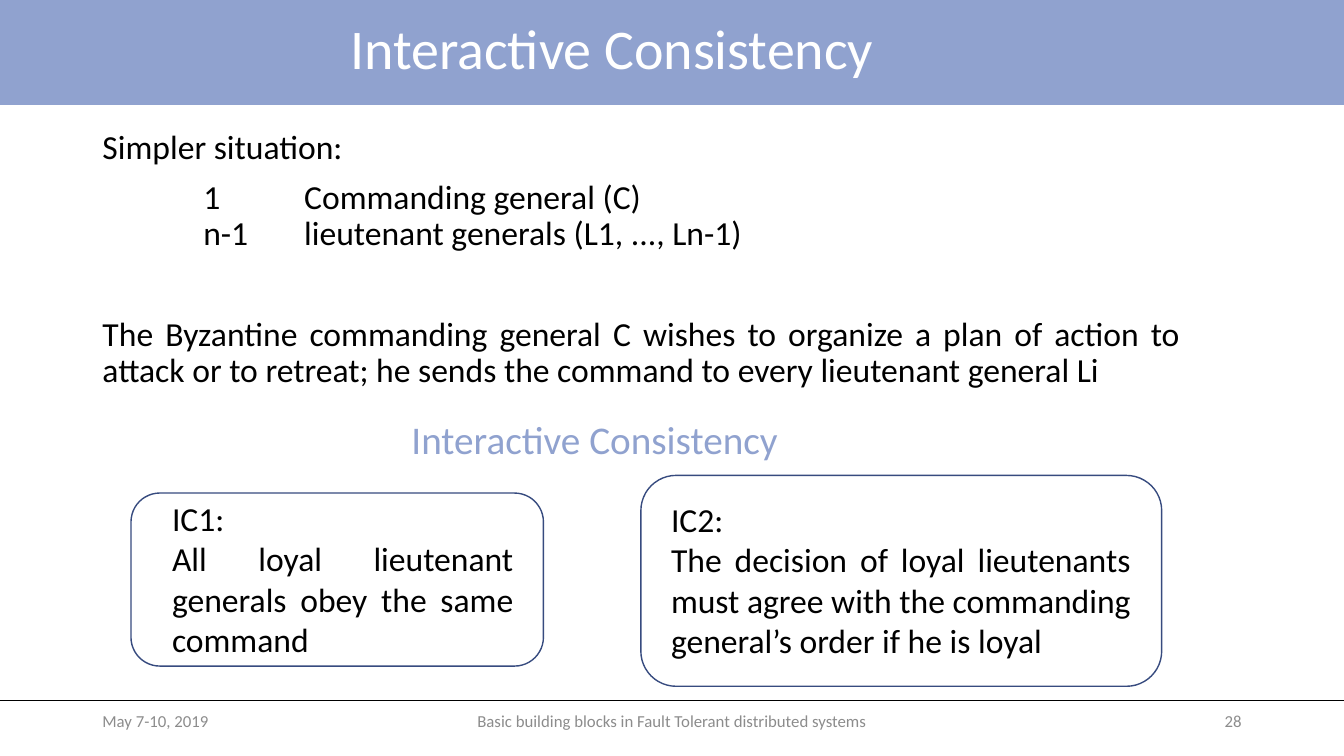
from dataclasses import dataclass

from lxml import etree
from pptx import Presentation
from pptx.dml.color import RGBColor
from pptx.enum.shapes import MSO_CONNECTOR, MSO_SHAPE
from pptx.enum.text import MSO_ANCHOR, MSO_AUTO_SIZE, PP_ALIGN
from pptx.oxml.ns import qn
from pptx.util import Inches, Pt

LEFT, CENTER, RIGHT, JUSTIFY = PP_ALIGN.LEFT, PP_ALIGN.CENTER, PP_ALIGN.RIGHT, PP_ALIGN.JUSTIFY
TOP, MIDDLE = MSO_ANCHOR.TOP, MSO_ANCHOR.MIDDLE
RECTANGLE, ROUNDED = MSO_SHAPE.RECTANGLE, MSO_SHAPE.ROUNDED_RECTANGLE
STRAIGHT = MSO_CONNECTOR.STRAIGHT
NO_AUTOFIT = MSO_AUTO_SIZE.NONE

WIDTH, HEIGHT = Inches(13.33), Inches(7.5)
COLUMN, ROW = WIDTH / 16, HEIGHT / 9
FOOTER_ROW = 8.34


@dataclass(frozen=True)
class Theme:
    font: str = "Calibri"
    accent: str = "90A2CF"
    outline: str = "374B7F"
    text: str = "000000"
    light: str = "FFFFFF"
    muted: str = "8C8C8C"
    title_size: int = 40
    heading_size: int = 28
    body_size: int = 24
    footer_size: int = 12


THEME = Theme()


def color(value):
    return RGBColor.from_string(value)


def grid(left, top, width, height):
    return [round(length) for length in (left * COLUMN, top * ROW, width * COLUMN, height * ROW)]


def place(shape, area):
    shape.left, shape.top, shape.width, shape.height = grid(*area)


def write(frame, text, size=THEME.body_size, ink=THEME.text, align=LEFT, spacing=1.0,
          before=0, margin=0, indent=0, first=False):
    paragraph = frame.paragraphs[0] if first else frame.add_paragraph()
    properties = paragraph._p.get_or_add_pPr()
    properties.set("marL", str(Inches(margin)))
    properties.set("indent", str(Inches(indent)))
    etree.SubElement(properties, qn("a:buNone"))
    paragraph.text = text
    paragraph.alignment = align
    paragraph.line_spacing = spacing
    paragraph.space_before = Pt(before)
    paragraph.font.name = THEME.font
    paragraph.font.size = Pt(size)
    paragraph.font.color.rgb = color(ink)


def prepare(shape, anchor):
    frame = shape.text_frame
    frame.word_wrap = True
    frame.auto_size = NO_AUTOFIT
    frame.vertical_anchor = anchor
    return frame


def add_text(slide, area, lines, anchor=TOP, **style):
    frame = prepare(slide.shapes.add_textbox(*grid(*area)), anchor)
    for number, line in enumerate(lines):
        write(frame, line, first=number == 0, **style)


def add_box(slide, kind, area, fill=None, outline=None):
    shape = slide.shapes.add_shape(kind, *grid(*area))
    shape.shadow.inherit = False
    if fill:
        shape.fill.solid()
        shape.fill.fore_color.rgb = color(fill)
    else:
        shape.fill.background()
    if outline:
        shape.line.color.rgb = color(outline)
        shape.line.width = Pt(1)
    else:
        shape.line.fill.background()
    return shape


def add_rule(slide, row):
    y = round(row * ROW)
    rule = slide.shapes.add_connector(STRAIGHT, 0, y, WIDTH, y)
    rule.line.color.rgb = color(THEME.text)
    rule.line.width = Pt(0.5)
    etree.SubElement(rule.element.spPr, qn("a:effectLst"))
    return rule


def add_background(slide):
    band = add_box(slide, RECTANGLE, (0, 0, 16, 1.25), fill=THEME.accent)
    rule = add_rule(slide, FOOTER_ROW)
    for position, shape in enumerate((band, rule), start=2):
        slide.shapes.element.insert(position, shape.element)


def fill_title(slide):
    title = slide.shapes.title
    place(title, (0, 0, 14.57, 1.22))
    write(prepare(title, MIDDLE), "Interactive Consistency", size=THEME.title_size,
          ink=THEME.light, align=CENTER, spacing=0.9, first=True)


def fill_body(slide):
    body = slide.placeholders[1]
    place(body, (1.1, 1.49, 13.07, 3.31))
    frame = prepare(body, TOP)
    write(frame, "Simpler situation:", spacing=0.9, first=True)
    for text, before in (("1\tCommanding general (C)", 10),
                         ("n-1\tlieutenant generals (L1, ..., Ln-1)", 0)):
        write(frame, text, spacing=0.9, before=before, margin=2, indent=-1)
    write(frame, "The Byzantine commanding general C wishes to organize a plan of action to "
          "attack or to retreat; he sends the command to every lieutenant general Li",
          align=JUSTIFY, spacing=0.9, before=46)


def add_footer(slide):
    for left, width, text, align in (
            (1.1, 3.6, "May 7-10, 2019", LEFT),
            (5.3, 5.4, "Basic building blocks in Fault Tolerant distributed systems", CENTER),
            (11.3, 3.6, "28", RIGHT)):
        add_text(slide, (left, FOOTER_ROW, width, 0.48), [text], anchor=MIDDLE,
                 size=THEME.footer_size, ink=THEME.muted, align=align)


def add_condition(slide, frame_area, text_area, lines):
    add_text(slide, text_area, lines, align=JUSTIFY)
    add_box(slide, ROUNDED, frame_area, outline=THEME.outline)


def main():
    presentation = Presentation()
    presentation.slide_width, presentation.slide_height = WIDTH, HEIGHT
    slide = presentation.slides.add_slide(presentation.slide_layouts[1])
    fill_title(slide)
    add_background(slide)
    add_footer(slide)
    fill_body(slide)
    add_text(slide, (4.78, 4.88, 5.71, 0.68), ["Interactive Consistency"],
             size=THEME.heading_size, ink=THEME.accent)
    add_condition(slide, (1.56, 5.87, 4.91, 2.06), (1.93, 5.87, 4.3, 2.06),
                  ["IC1:", "All loyal lieutenant generals obey the same command"])
    add_condition(slide, (7.63, 5.66, 6.2, 2.51), (7.87, 5.88, 5.71, 2.06),
                  ["IC2:", "The decision of loyal lieutenants must agree with the "
                   "commanding general’s order if he is loyal"])
    presentation.save("out.pptx")


if __name__ == "__main__":
    main()
